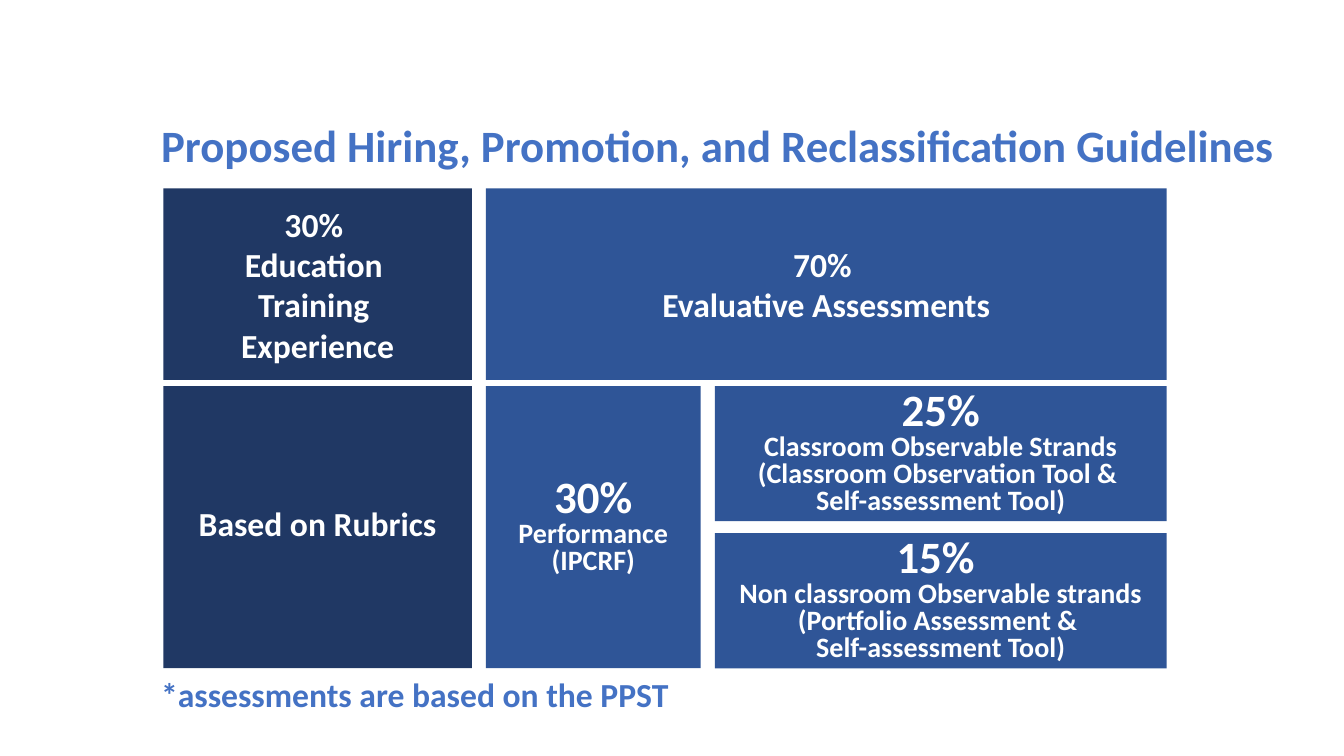
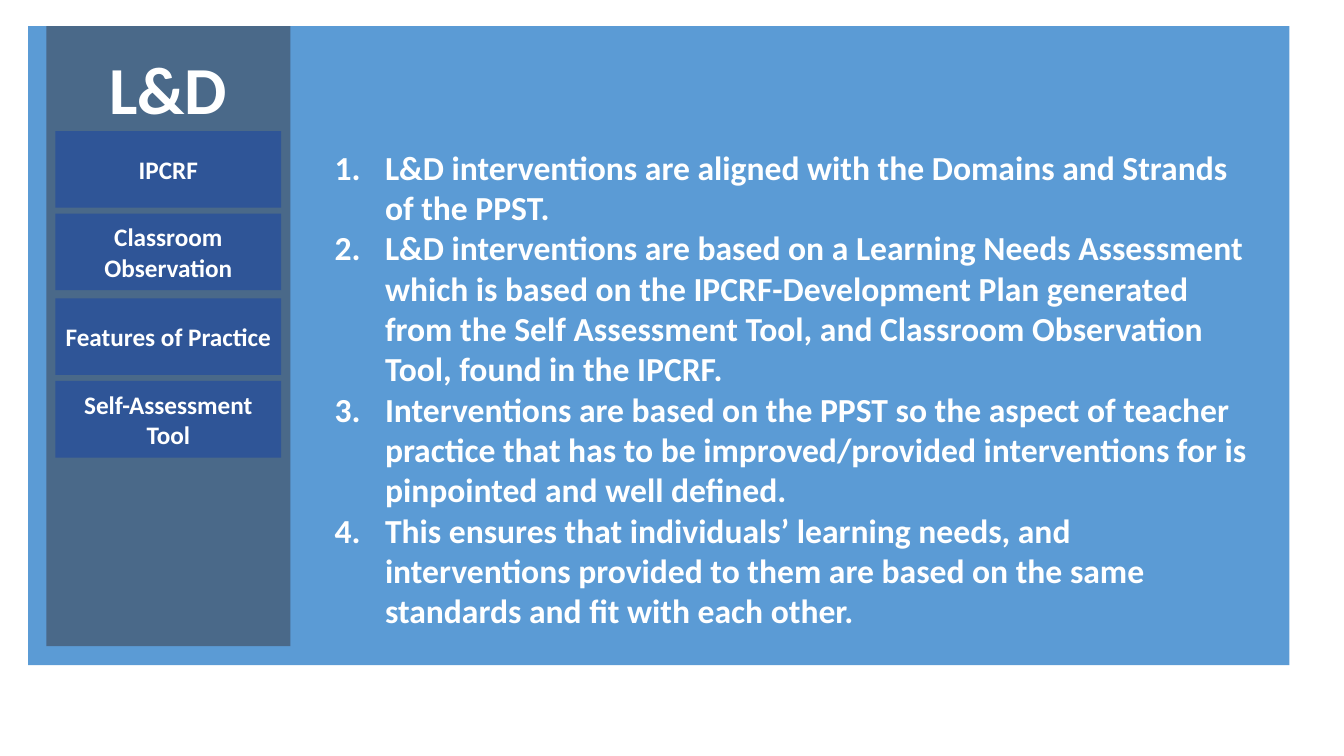
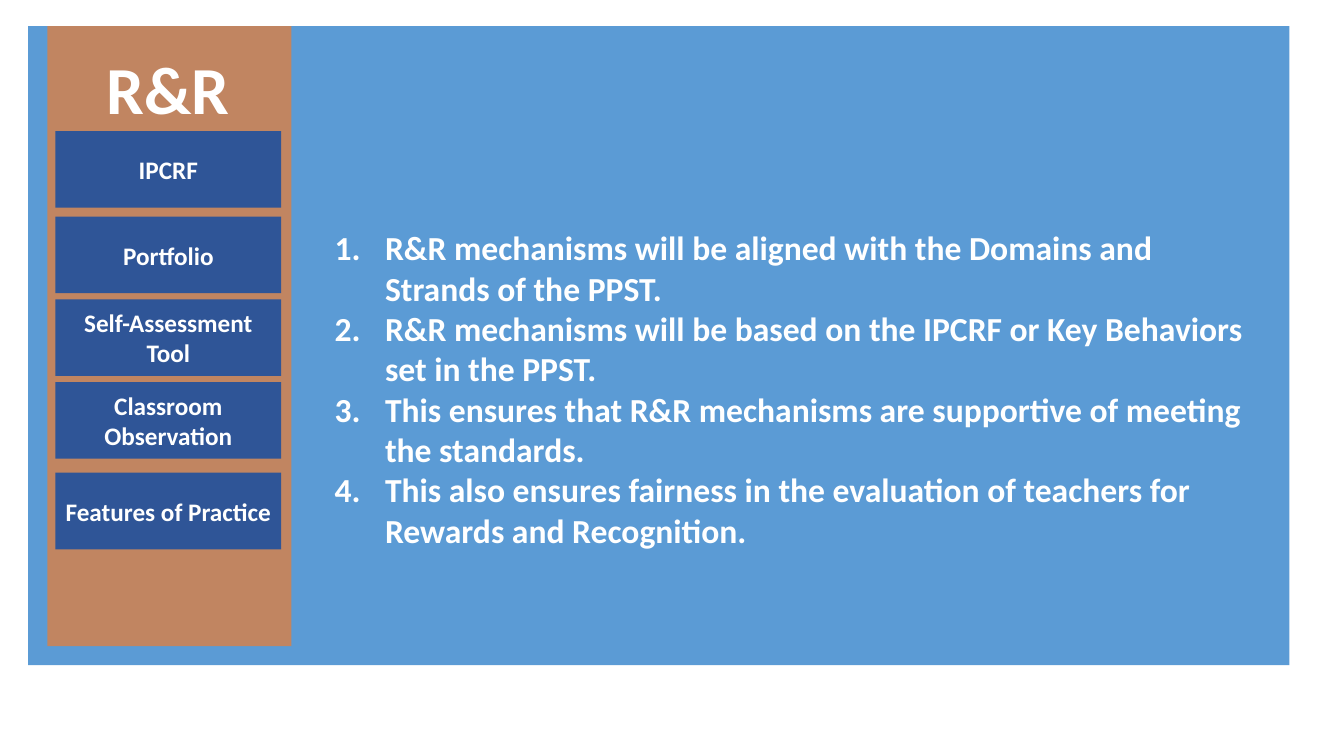
from dataclasses import dataclass

import pptx
import pptx.dml.color
import pptx.enum.shapes
import pptx.enum.text
import pptx.oxml.ns
import pptx.presentation
import pptx.shapes.autoshape
import pptx.slide
import pptx.text.text
import pptx.util
from lxml import etree

Inches = pptx.util.Inches
ALIGN = pptx.enum.text.PP_ALIGN

FONT = "Calibri"
WHITE = "FFFFFF"
NAVY = "203864"
BLUE = "2F5597"
SKY = "5B9BD5"
ACCENT = "4472C4"
SLATE = "44546A"
ORANGE = "ED7D31"


@dataclass(frozen=True)
class Area:
    left: float
    top: float
    width: float
    height: float

    def lengths(self) -> tuple[pptx.util.Length, ...]:
        return tuple(Inches(v) for v in (self.left, self.top, self.width, self.height))


@dataclass(frozen=True)
class Line:
    text: str
    size: int = 24


@dataclass(frozen=True)
class Tile:
    area: Area
    fill: str
    lines: list[Line]
    spacing: float = 1.0


@dataclass(frozen=True)
class Topic:
    """A slide with a tinted side panel of tools and a numbered list."""
    heading: str
    tint: str
    panel_left: float
    tools: dict[str, float]  # label -> top in inches
    points: list[str]


def rgb(value: str) -> pptx.dml.color.RGBColor:
    return pptx.dml.color.RGBColor.from_string(value)


def write(frame: pptx.text.text.TextFrame, lines: list[Line], color: str,
          align: ALIGN, spacing: float = 1.0, numbered: bool = False) -> None:
    frame.word_wrap = True
    frame.vertical_anchor = pptx.enum.text.MSO_ANCHOR.MIDDLE
    for index, line in enumerate(lines):
        paragraph = frame.add_paragraph() if index else frame.paragraphs[0]
        paragraph.text = line.text
        paragraph.alignment = align
        if spacing != 1.0:
            paragraph.line_spacing = spacing
        if numbered:
            number(paragraph)
        font = paragraph.font
        font.name = FONT
        font.size = pptx.util.Pt(line.size)
        font.bold = True
        font.color.rgb = rgb(color)


def number(paragraph: pptx.text.text._Paragraph) -> None:
    """Turn on automatic numbering with a half-inch hanging indent."""
    properties = paragraph._p.get_or_add_pPr()
    properties.set("marL", str(Inches(0.5)))
    properties.set("indent", str(-Inches(0.5)))
    etree.SubElement(properties, pptx.oxml.ns.qn("a:buAutoNum"), type="arabicPeriod")


def add_text(slide: pptx.slide.Slide, area: Area, lines: list[Line],
             color: str = WHITE, align: ALIGN = ALIGN.LEFT,
             numbered: bool = False) -> None:
    box = slide.shapes.add_textbox(*area.lengths())
    write(box.text_frame, lines, color, align, numbered=numbered)


def add_block(slide: pptx.slide.Slide, area: Area, fill: str,
              opacity: int = 100) -> pptx.shapes.autoshape.Shape:
    block = slide.shapes.add_shape(
        pptx.enum.shapes.MSO_SHAPE.RECTANGLE, *area.lengths())
    block.shadow.inherit = False
    block.line.fill.background()
    block.fill.solid()
    block.fill.fore_color.rgb = rgb(fill)
    if opacity < 100:
        color = block._element.spPr.find(".//" + pptx.oxml.ns.qn("a:srgbClr"))
        etree.SubElement(color, pptx.oxml.ns.qn("a:alpha"), val=str(opacity * 1000))
    return block


def add_tile(slide: pptx.slide.Slide, tile: Tile, side_margin: float = 0.1) -> None:
    frame = add_block(slide, tile.area, tile.fill).text_frame
    frame.margin_left = frame.margin_right = Inches(side_margin)
    write(frame, tile.lines, WHITE, ALIGN.CENTER, tile.spacing)


def share(percent: str, *details: str) -> list[Line]:
    return [Line(percent, 32), *(Line(detail, 20) for detail in details)]


def blank_slide(deck: pptx.presentation.Presentation) -> pptx.slide.Slide:
    return deck.slides.add_slide(deck.slide_layouts[6])


def add_guidelines(deck: pptx.presentation.Presentation) -> None:
    slide = blank_slide(deck)
    column_gap, row_gap, strand_gap = 0.14, 0.06, 0.12
    left, top = 1.62, 1.87
    rubric_width, performance_width, strand_width = 3.06, 2.13, 4.48
    upper_height, lower_height = 1.9, 2.8

    performance_left = left + rubric_width + column_gap
    strand_left = performance_left + performance_width + column_gap
    assessment_width = performance_width + column_gap + strand_width
    lower_top = top + upper_height + row_gap
    strand_height = (lower_height - strand_gap) / 2
    second_strand_top = lower_top + strand_height + strand_gap

    tiles = [
        Tile(Area(left, top, rubric_width, upper_height), NAVY,
             [Line("30% "), Line("Education "), Line("Training "), Line("Experience")]),
        Tile(Area(performance_left, top, assessment_width, upper_height), BLUE,
             [Line("70% "), Line("Evaluative Assessments")]),
        Tile(Area(left, lower_top, rubric_width, lower_height), NAVY,
             [Line("Based on Rubrics")], 0.8),
        Tile(Area(performance_left, lower_top, performance_width, lower_height), BLUE,
             share("30%", "Performance", "(IPCRF)"), 0.8),
        Tile(Area(strand_left, lower_top, strand_width, strand_height), BLUE,
             share("25%", "Classroom Observable Strands",
                   "(Classroom Observation Tool & ", "Self-assessment Tool)"), 0.8),
        Tile(Area(strand_left, second_strand_top, strand_width, strand_height), BLUE,
             share("15% ", "Non classroom Observable strands",
                   "(Portfolio Assessment & ", "Self-assessment Tool)"), 0.8),
    ]
    for tile in tiles:
        add_tile(slide, tile)

    add_text(slide, Area(1.5, 1.05, 11.74, 0.76),
             [Line("Proposed Hiring, Promotion, and Reclassification Guidelines", 32)],
             ACCENT)
    add_text(slide, Area(1.5, 6.51, 11.74, 0.76),
             [Line("*assessments are based on the PPST")], ACCENT)


def add_topic(deck: pptx.presentation.Presentation, topic: Topic) -> None:
    slide = blank_slide(deck)
    add_block(slide, Area(0.28, 0.26, 12.51, 6.34), SKY)
    add_block(slide, Area(topic.panel_left, 0.26, 2.42, 6.15), topic.tint, opacity=70)
    add_text(slide, Area(0.92, 0.49, 1.5, 0.76), [Line(topic.heading, 48)],
             align=ALIGN.CENTER)
    for label, top in topic.tools.items():
        add_tile(slide, Tile(Area(0.55, top, 2.24, 0.76), BLUE, [Line(label, 18)]),
                 side_margin=0.08)
    add_text(slide, Area(3.22, 1.3, 9.38, 5.11),
             [Line(point) for point in topic.points], numbered=True)


TOPICS = [
    Topic(
        "L&D", SLATE, 0.46,
        {"IPCRF": 1.3, "Classroom Observation": 2.12,
         "Features of Practice": 2.96, "Self-Assessment Tool": 3.78},
        ["L&D interventions are aligned with the Domains and Strands of the PPST.",
         "L&D interventions are based on a Learning Needs Assessment which is based "
         "on the IPCRF-Development Plan generated from the Self Assessment Tool, and "
         "Classroom Observation Tool, found in the IPCRF.",
         "Interventions are based on the PPST so the aspect of teacher practice that "
         "has to be improved/provided interventions for is pinpointed and well defined.",
         "This ensures that individuals’ learning needs, and interventions provided to "
         "them are based on the same standards and fit with each other."],
    ),
    Topic(
        "R&R", ORANGE, 0.47,
        {"IPCRF": 1.3, "Portfolio": 2.15, "Self-Assessment Tool": 2.97,
         "Classroom Observation": 3.79, "Features of Practice": 4.69},
        ["R&R mechanisms will be aligned with the Domains and Strands of the PPST.",
         "R&R mechanisms will be based on the IPCRF or Key Behaviors set in the PPST.",
         "This ensures that R&R mechanisms are supportive of meeting the standards.",
         "This also ensures fairness in the evaluation of teachers for Rewards and "
         "Recognition."],
    ),
]


def main() -> None:
    deck = pptx.Presentation()
    deck.slide_width = Inches(13.33)
    deck.slide_height = Inches(7.5)
    add_guidelines(deck)
    for topic in TOPICS:
        add_topic(deck, topic)
    deck.save("out.pptx")


if __name__ == "__main__":
    main()
